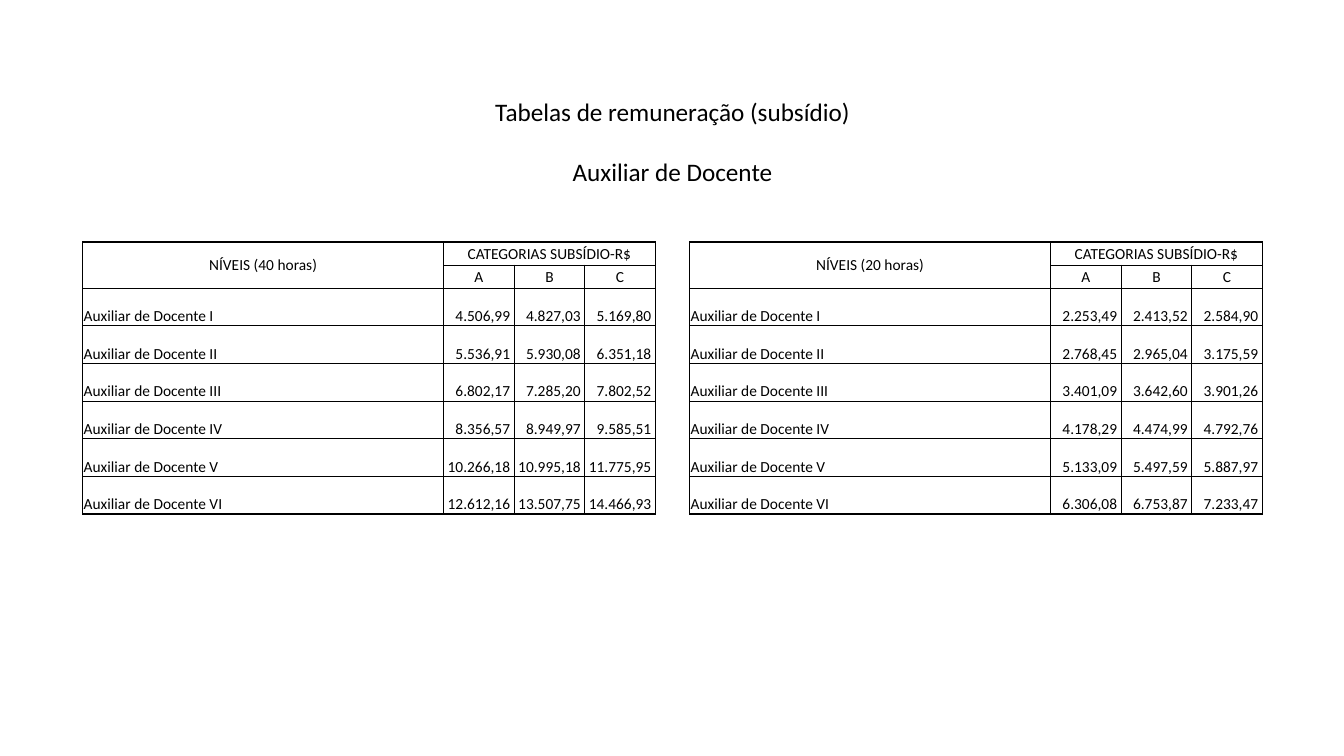
import pptx
import pptx.util
import pptx.dml.color
import pptx.enum.text
import pptx.oxml
import pptx.oxml.ns

Inches = pptx.util.Inches
Pt = pptx.util.Pt
Align = pptx.enum.text.PP_ALIGN
Anchor = pptx.enum.text.MSO_ANCHOR
BLACK = pptx.dml.color.RGBColor(0, 0, 0)

ROLE = "Auxiliar de Docente"
LEVELS = ["I", "II", "III", "IV", "V", "VI"]
GRADES = ["A", "B", "C"]
PAY_40 = [
    ["4.506,99", "4.827,03", "5.169,80"],
    ["5.536,91", "5.930,08", "6.351,18"],
    ["6.802,17", "7.285,20", "7.802,52"],
    ["8.356,57", "8.949,97", "9.585,51"],
    ["10.266,18", "10.995,18", "11.775,95"],
    ["12.612,16", "13.507,75", "14.466,93"],
]
PAY_20 = [
    ["2.253,49", "2.413,52", "2.584,90"],
    ["2.768,45", "2.965,04", "3.175,59"],
    ["3.401,09", "3.642,60", "3.901,26"],
    ["4.178,29", "4.474,99", "4.792,76"],
    ["5.133,09", "5.497,59", "5.887,97"],
    ["6.306,08", "6.753,87", "7.233,47"],
]


class Page:
    """Draws the pay slide in one shared style."""

    font = "Calibri"
    color = BLACK
    line = Pt(1)

    def __init__(self, slide):
        self.slide = slide

    def text(self, para, words, size, align):
        para.alignment = align
        run = para.add_run()
        run.text = words
        run.font.name = self.font
        run.font.size = Pt(size)
        run.font.color.rgb = self.color

    def title(self, lines, left, top, width, height):
        box = self.slide.shapes.title
        box.left, box.top = Inches(left), Inches(top)
        box.width, box.height = Inches(width), Inches(height)
        frame = box.text_frame
        frame.word_wrap = True
        frame.auto_size = pptx.enum.text.MSO_AUTO_SIZE.NONE
        frame.vertical_anchor = Anchor.TOP
        for i, words in enumerate(lines):
            para = frame.add_paragraph() if i else frame.paragraphs[0]
            para.line_spacing = 1.0
            para.space_before = Pt(21 if i else 0)
            self.text(para, words, 18, Align.CENTER)

    def border(self, cell):
        props = cell._tc.get_or_add_tcPr()
        space = pptx.oxml.ns.nsdecls("a")
        for side in "LRTB":
            props.append(pptx.oxml.parse_xml(
                f'<a:ln{side} {space} w="{self.line}"><a:solidFill>'
                f'<a:srgbClr val="{self.color}"/></a:solidFill></a:ln{side}>'))

    def cell(self, cell, words, align, anchor):
        cell.vertical_anchor = anchor
        self.text(cell.text_frame.paragraphs[0], words, 11, align)

    def table(self, hours, pay, left, top):
        widths = [3.58] + [0.7] * len(GRADES)
        heights = [0.23] * 2 + [2.24 / len(pay)] * len(pay)
        grid = self.slide.shapes.add_table(
            len(heights), len(widths), Inches(left), Inches(top),
            Inches(sum(widths)), Inches(sum(heights))).table
        grid.first_row = grid.horz_banding = False
        for col, width in zip(grid.columns, widths):
            col.width = Inches(width)
        for row, height in zip(grid.rows, heights):
            row.height = Inches(height)
        for cell in grid.iter_cells():
            cell.margin_left = cell.margin_right = cell.margin_top = Inches(0.01)
            cell.margin_bottom = 0
            self.border(cell)
            cell.fill.background()
        grid.cell(0, 0).merge(grid.cell(1, 0))
        grid.cell(0, 1).merge(grid.cell(0, len(GRADES)))
        heads = [(0, 0, f"NÍVEIS ({hours} horas)"), (0, 1, "CATEGORIAS SUBSÍDIO-R$")]
        heads += [(1, c, grade) for c, grade in enumerate(GRADES, 1)]
        for r, c, words in heads:
            self.cell(grid.cell(r, c), words, Align.CENTER, Anchor.MIDDLE)
        for r, (level, sums) in enumerate(zip(LEVELS, pay), 2):
            self.cell(grid.cell(r, 0), f"{ROLE} {level}", Align.LEFT, Anchor.BOTTOM)
            for c, words in enumerate(sums, 1):
                cell = grid.cell(r, c)
                cell.margin_right = Inches(0.04)
                self.cell(cell, words, Align.RIGHT, Anchor.BOTTOM)


def main():
    deck = pptx.Presentation()
    deck.slide_width, deck.slide_height = Inches(13.33), Inches(7.5)
    page = Page(deck.slides.add_slide(deck.slide_layouts[5]))
    page.title(["Tabelas de remuneração (subsídio)", ROLE], 1.99, 0.91, 9.36, 1.01)
    page.table(40, PAY_40, 0.82, 2.4)
    page.table(20, PAY_20, 6.84, 2.4)
    deck.save("out.pptx")


if __name__ == "__main__":
    main()
